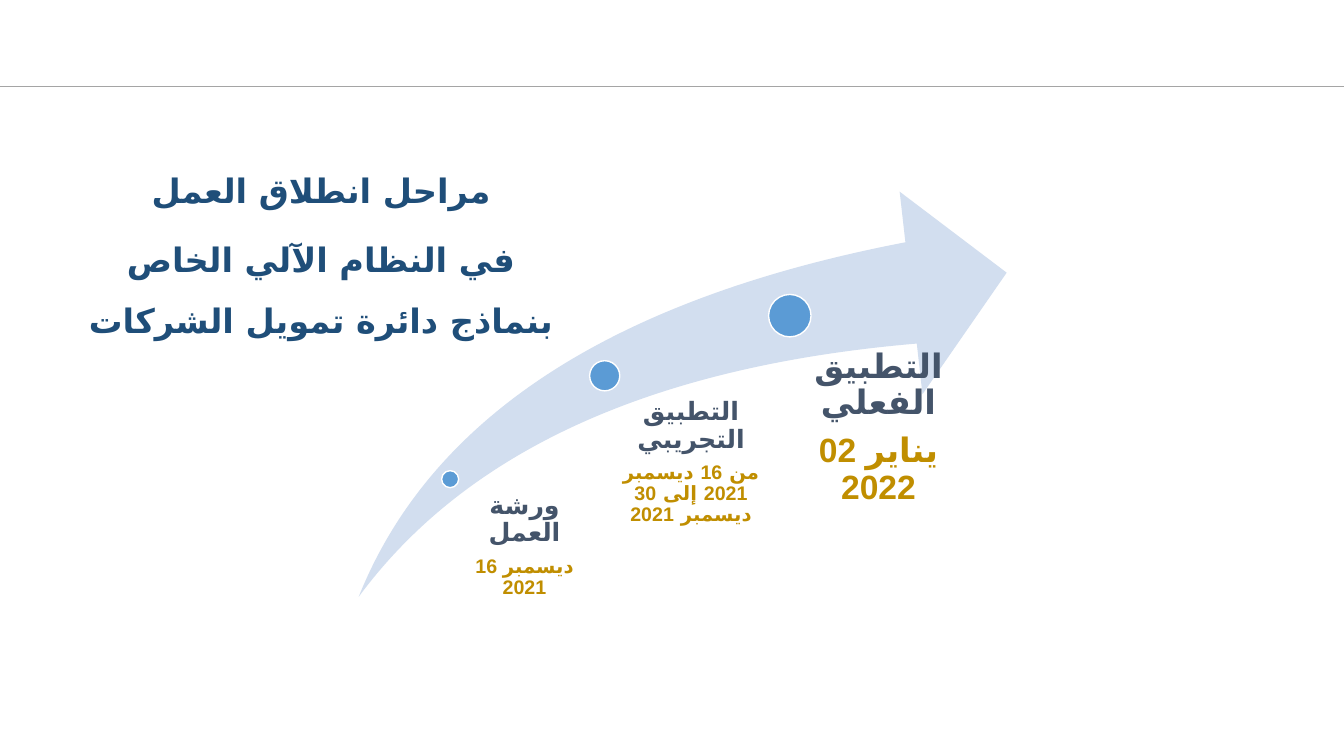
from itertools import groupby

from lxml import etree
from pptx import Presentation
from pptx import util as u
from pptx.dml.color import RGBColor
from pptx.enum import shapes, text
from pptx.oxml.ns import qn

NAVY, SLATE, GOLD = "1F4E79", "44546A", "C08E00"
BLUE, PALE_BLUE, GREY, WHITE = "5B9BD5", "D2DEEF", "A5A5A5", "FFFFFF"
ARABIC_FONT = "DejaVu Sans"

TITLE = ["مراحل انطلاق العمل", "في النظام الآلي الخاص بنماذج دائرة تمويل الشركات"]
TITLE_BOX = (1.93, 3.66, 12.32, 9.6)
ARROW_BOX = (9.04, 4.83, 16.33, 10.21)
RULE_Y = 2.18

# Lengths in cm: dot is left, top, diameter; box is left, top, width, height
STAGES = [
    {"name": "ورشة العمل", "date": "16 ديسمبر 2021", "sizes": (18, 14),
     "dot": (11.13, 11.86, 0.43), "box": (11.2, 12.42, 3.81, 2.29), "inset": 0.23},
    {"name": "التطبيق التجريبي", "date": "من 16 ديسمبر 2021 إلى 30 ديسمبر 2021",
     "sizes": (18, 14),
     "dot": (14.86, 9.09, 0.76), "box": (14.96, 10.06, 4.5, 4.24), "inset": 0.41},
    {"name": "التطبيق الفعلي", "date": "02 يناير 2022", "sizes": (24, 24),
     "dot": (19.37, 7.42, 1.07), "box": (19.18, 8.81, 5.36, 5.36), "inset": 0.56},
]


def paint(color_format, hex_color):
    color_format.rgb = RGBColor.from_string(hex_color)


def add_filled(slide, preset, box, fill, outline=None):
    shape = slide.shapes.add_shape(preset, *map(u.Cm, box))
    shape.shadow.inherit = False
    shape.fill.solid()
    paint(shape.fill.fore_color, fill)
    if outline:
        paint(shape.line.color, outline)
        shape.line.width = u.Pt(1)
    else:
        shape.line.fill.background()
    return shape


def add_frame(slide, box):
    frame = slide.shapes.add_textbox(*map(u.Cm, box)).text_frame
    frame.word_wrap = True
    return frame


def write(paragraph, wording, size, font_name, color, line_spacing, space_after):
    """Fill the paragraph, with numbers and Arabic words in separate runs."""
    paragraph.alignment = text.PP_ALIGN.CENTER
    paragraph.line_spacing = line_spacing
    paragraph.space_after = u.Pt(space_after)
    for is_number, letters in groupby(wording, str.isdigit):
        run = paragraph.add_run()
        run.text = "".join(letters)
        run.font.size = u.Pt(size)
        run.font.bold = True
        paint(run.font.color, color)
        run.font.name = font_name
        script_font = font_name if is_number else ARABIC_FONT
        etree.SubElement(run.font._element, qn("a:cs"), typeface=script_font)


def add_title(slide):
    frame = add_frame(slide, TITLE_BOX)
    for index, wording in enumerate(TITLE):
        paragraph = frame.add_paragraph() if index else frame.paragraphs[0]
        write(paragraph, wording, 24, "Calibri", NAVY, 1.5, 6)
        paragraph._p.get_or_add_pPr().set("rtl", "1")


def add_stage(slide, stage):
    left, top, diameter = stage["dot"]
    add_filled(slide, shapes.MSO_SHAPE.OVAL, (left, top, diameter, diameter), BLUE, WHITE)
    frame = add_frame(slide, stage["box"])
    frame.margin_left = u.Cm(stage["inset"])
    frame.margin_top = frame.margin_right = frame.margin_bottom = 0
    name_size, date_size = stage["sizes"]
    write(frame.paragraphs[0], stage["name"], name_size, "Calibri", SLATE,
          0.9, round(name_size * 0.35, 1))
    write(frame.add_paragraph(), stage["date"], date_size, "Arial", GOLD,
          0.9, round(date_size * 0.35, 1))


def add_rule(slide, width):
    rule = slide.shapes.add_connector(
        shapes.MSO_CONNECTOR.STRAIGHT, 0, u.Cm(RULE_Y), width, u.Cm(RULE_Y))
    paint(rule.line.color, GREY)
    rule.line.width = u.Pt(0.5)
    etree.SubElement(rule._element.spPr, qn("a:effectLst"))


def main():
    deck = Presentation()
    deck.slide_width, deck.slide_height = u.Cm(33.87), u.Cm(19.05)
    slide = deck.slides.add_slide(deck.slide_layouts[6])
    add_rule(slide, deck.slide_width)
    add_title(slide)
    arrow = add_filled(slide, shapes.MSO_SHAPE.SWOOSH_ARROW, ARROW_BOX, PALE_BLUE)
    arrow.adjustments[0] = arrow.adjustments[1] = 0.25
    for stage in STAGES:
        add_stage(slide, stage)
    deck.save("out.pptx")


if __name__ == "__main__":
    main()
